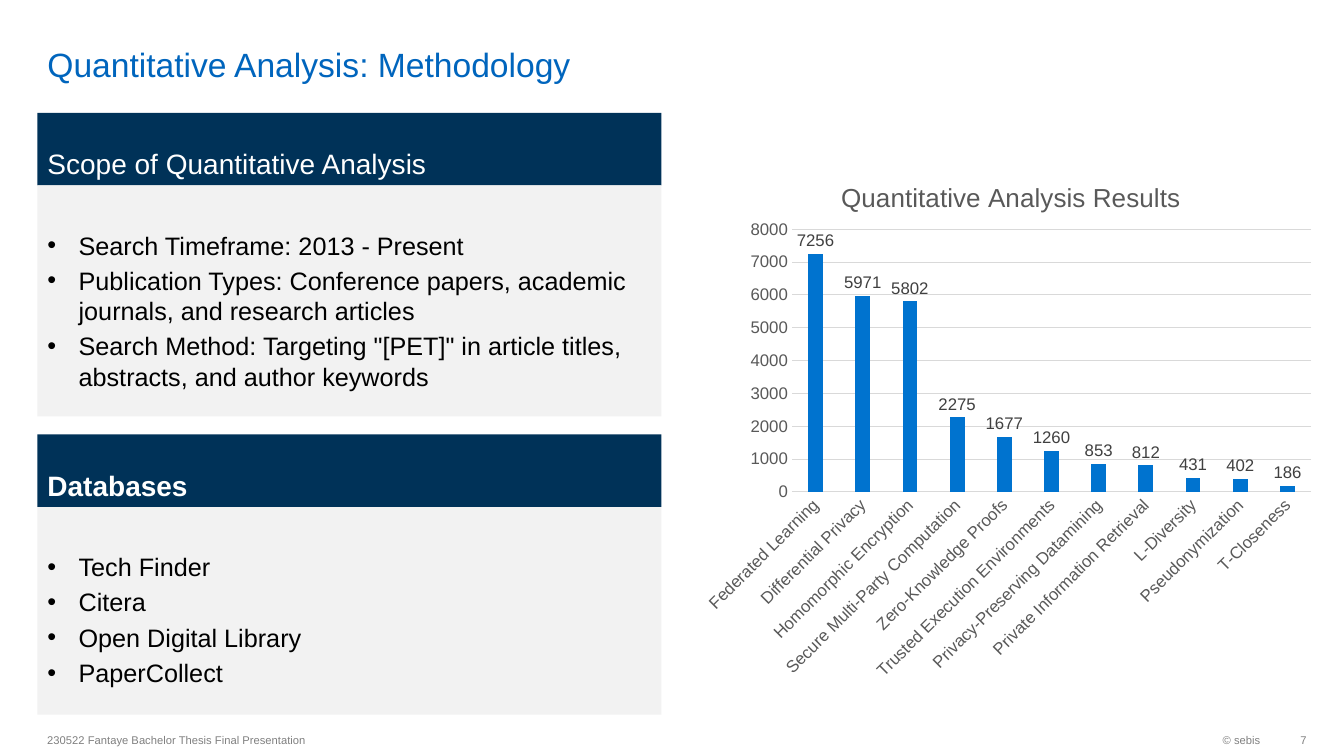
from lxml import etree
from pptx import Presentation
from pptx import util as u
from pptx.chart.data import CategoryChartData
from pptx.dml.color import RGBColor
from pptx.enum import chart as ch, text
from pptx.oxml import ns

BLUE = RGBColor(0x00, 0x65, 0xBD)
BAR_BLUE = RGBColor(0x00, 0x73, 0xCF)
NAVY = RGBColor(0x00, 0x32, 0x58)
PALE = RGBColor(0xF2, 0xF2, 0xF2)
WHITE = RGBColor(0xFF, 0xFF, 0xFF)
BLACK = RGBColor(0x00, 0x00, 0x00)
FOOT_GREY = RGBColor(0x80, 0x80, 0x80)
AXIS_GREY = RGBColor(0x59, 0x59, 0x59)
LABEL_GREY = RGBColor(0x40, 0x40, 0x40)
LINE_GREY = RGBColor(0xD9, 0xD9, 0xD9)

LEFT, PANEL_W, HEAD_H = 0.37, 6.19, 0.72
FOOT_TOP, FOOT_H = 7.18, 0.32


def style(font, size, color, bold=False):
    font.name, font.size, font.bold = "Arial", u.Pt(size), bold
    font.color.rgb = color


def fill_box(box, bounds, lines, size, color, anchor, bold=False,
             align=text.PP_ALIGN.LEFT):
    box.left, box.top, box.width, box.height = map(u.Inches, bounds)
    frame = box.text_frame
    frame.text = "\n".join(lines)
    frame.word_wrap = True
    frame.auto_size = text.MSO_AUTO_SIZE.NONE
    frame.vertical_anchor = anchor
    for i, paragraph in enumerate(frame.paragraphs):
        paragraph.alignment = align
        paragraph.space_before = u.Pt(0.2 * size if i else 0)
        style(paragraph.runs[0].font, size, color, bold)
    return frame


prs = Presentation()
prs.slide_width, prs.slide_height = u.Inches(13.33), u.Inches(7.5)
slide = prs.slides.add_slide(prs.slide_layouts[4])
title, *panels = slide.placeholders

# Title
title_frame = fill_box(title, (LEFT, 0.05, 11.58, 0.79),
                       ["Quantitative Analysis: Methodology"], 24, BLUE,
                       text.MSO_ANCHOR.BOTTOM)
title_frame.margin_top = title_frame.margin_bottom = 0

# Two panels: navy heading above a pale bullet list
sections = [
    (1.12, 2.29, False, "Scope of Quantitative Analysis", [
        "Search Timeframe: 2013 - Present",
        "Publication Types: Conference papers, academic journals, and research articles",
        'Search Method: Targeting "[PET]" in article titles, abstracts, and author keywords']),
    (4.31, 2.06, True, "Databases", [
        "Tech Finder", "Citera", "Open Digital Library", "PaperCollect"]),
]
for (top, list_h, bold, heading, points), head, body in zip(
        sections, panels[::2], panels[1::2]):
    fill_box(head, (LEFT, top, PANEL_W, HEAD_H), [heading], 20, WHITE,
             text.MSO_ANCHOR.BOTTOM, bold)
    points_frame = fill_box(body, (LEFT, top + HEAD_H, PANEL_W, list_h), points,
                            18, BLACK, text.MSO_ANCHOR.TOP)
    points_frame.margin_top = u.Inches(0.44)
    for paragraph in points_frame.paragraphs:
        props = paragraph._p.get_or_add_pPr()
        props.set("marL", str(u.Inches(0.31)))
        props.set("indent", str(-u.Inches(0.31)))
        etree.SubElement(props, ns.qn("a:buChar")).set("char", "•")
    for part, color in ((head, NAVY), (body, PALE)):
        part.fill.solid()
        part.fill.fore_color.rgb = color

# Bar chart of publication counts
results = {
    "Federated Learning": 7256,
    "Differential Privacy": 5971,
    "Homomorphic Encryption": 5802,
    "Secure Multi-Party Computation": 2275,
    "Zero-Knowledge Proofs": 1677,
    "Trusted Execution Environments": 1260,
    "Privacy-Preserving Datamining": 853,
    "Private Information Retrieval": 812,
    "L-Diversity": 431,
    "Pseudonymization": 402,
    "T-Closeness": 186,
}
data = CategoryChartData()
data.categories = list(results)
data.add_series("Series 1", list(results.values()))
chart = slide.shapes.add_chart(
    ch.XL_CHART_TYPE.COLUMN_CLUSTERED,
    *map(u.Inches, (6.85, 1.53, 6.28, 5.32)), data).chart
style(chart.font, 10, BLACK)
chart.has_legend = False
chart.has_title = True
chart.chart_title.text_frame.text = "Quantitative Analysis Results"
style(chart.chart_title.text_frame.paragraphs[0].runs[0].font, 18.6, AXIS_GREY)

plot = chart.plots[0]
plot.gap_width, plot.overlap, plot.vary_by_categories = 219, -27, False
bars = plot.series[0].format.fill
bars.solid()
bars.fore_color.rgb = BAR_BLUE
plot.has_data_labels = True
labels = plot.data_labels
labels.show_value = True
labels.position = ch.XL_LABEL_POSITION.OUTSIDE_END
style(labels.font, 12, LABEL_GREY)

# Axes and gridlines
counts, techniques = chart.value_axis, chart.category_axis
for axis in (counts, techniques):
    axis.major_tick_mark = axis.minor_tick_mark = ch.XL_TICK_MARK.NONE
    style(axis.tick_labels.font, 12, AXIS_GREY)
counts.minimum_scale, counts.maximum_scale, counts.major_unit = 0, 8000, 1000
counts.format.line.fill.background()
counts.has_major_gridlines = True
for line in (counts.major_gridlines.format.line, techniques.format.line):
    line.color.rgb = LINE_GREY
    line.width = u.Pt(0.75)
label_body = techniques._element.find(ns.qn("c:txPr")).find(ns.qn("a:bodyPr"))
label_body.set("rot", str(-45 * 60000))
label_body.set("vert", "horz")

# Plot area and title positions as shares of the chart
plot_area = chart._chartSpace.chart.plotArea
chart_title = chart.chart_title._element
for parent, index, shares in (
        (plot_area, 0, {"x": 0.16, "y": 0.14, "w": 0.82, "h": 0.49}),
        (chart_title, 1, {"x": 0.23, "y": 0.04})):
    layout = parent.find(ns.qn("c:layout"))
    if layout is None:
        layout = etree.Element(ns.qn("c:layout"))
        parent.insert(index, layout)
    manual = etree.SubElement(layout, ns.qn("c:manualLayout"))
    if "w" in shares:
        etree.SubElement(manual, ns.qn("c:layoutTarget")).set("val", "inner")
    for side in ("x", "y"):
        etree.SubElement(manual, ns.qn(f"c:{side}Mode")).set("val", "edge")
    for key, share in shares.items():
        etree.SubElement(manual, ns.qn(f"c:{key}")).set("val", str(share))

# Footer
for left, width, words, align, inset in (
        (LEFT, 6.3, "230522 Fantaye Bachelor Thesis Final Presentation",
         text.PP_ALIGN.LEFT, 0.1),
        (10.26, 2.34, "© sebis", text.PP_ALIGN.RIGHT, 0.1),
        (12.6, 0.36, "7", text.PP_ALIGN.RIGHT, 0)):
    footer = slide.shapes.add_textbox(0, 0, 0, 0)
    footer_frame = fill_box(footer, (left, FOOT_TOP, width, FOOT_H), [words], 8,
                            FOOT_GREY, text.MSO_ANCHOR.MIDDLE, align=align)
    footer_frame.margin_right = u.Inches(inset)

prs.save("out.pptx")
